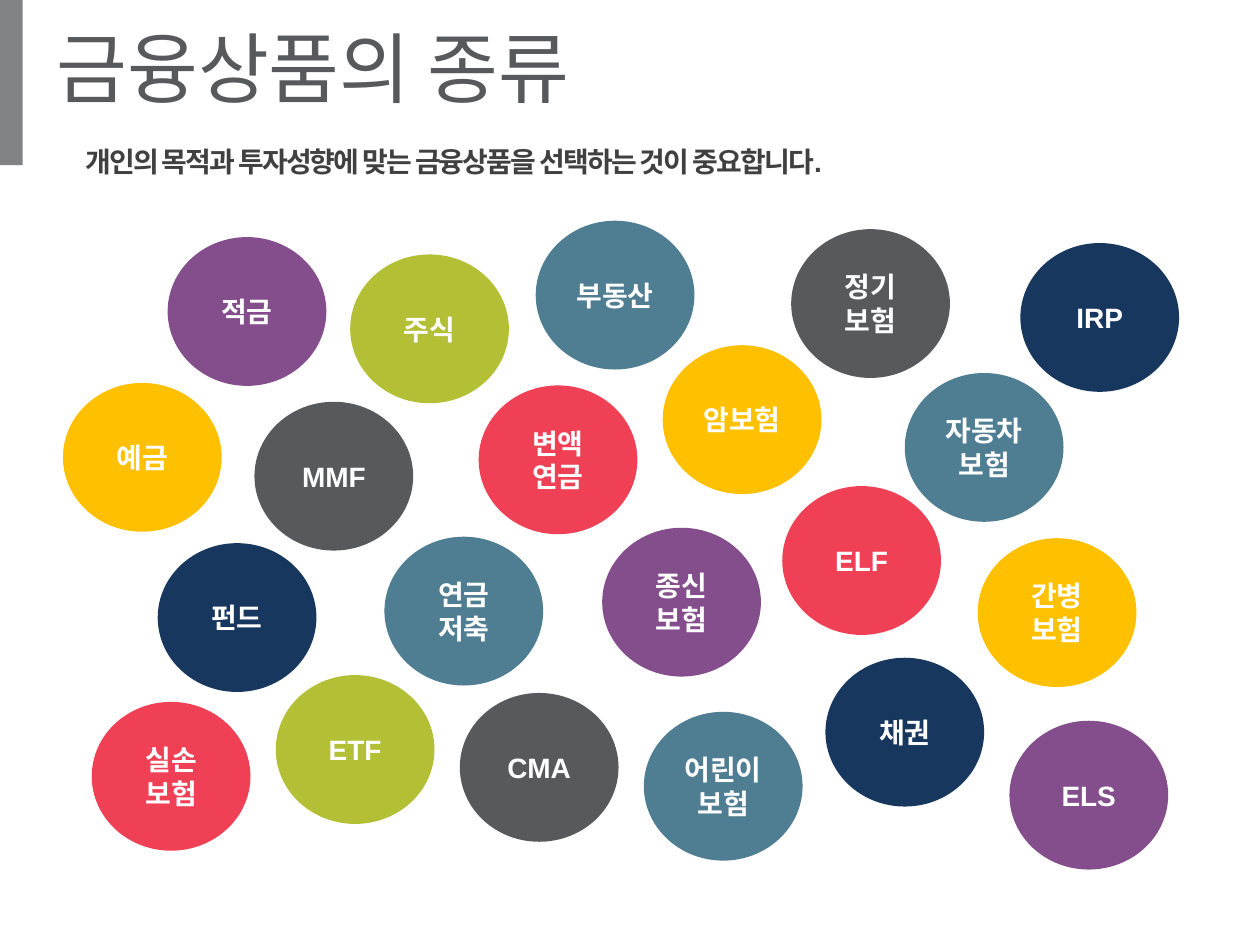
from pptx import Presentation
from pptx.dml.color import RGBColor
from pptx.enum.shapes import MSO_SHAPE as SHAPE
from pptx.enum.text import MSO_ANCHOR as ANCHOR, MSO_AUTO_SIZE as FIT, PP_ALIGN as ALIGN
from pptx.oxml.ns import qn
from pptx.util import Cm, Pt

COLORS = {
    "bar": "808285", "gray": "58595B", "text": "404040", "white": "FFFFFF",
    "purple": "834E8B", "yellow": "FFC000", "navy": "17375E",
    "green": "B3BF35", "red": "EF4056", "teal": "4F7D92",
}
BUBBLE_W, BUBBLE_H = 3.2, 3.0

# label, left (cm), top (cm), colour; from back to front
PRODUCTS = [
    ("적금", 3.38, 4.78, "purple"),
    ("예금", 1.27, 7.72, "yellow"),
    ("MMF", 5.13, 8.1, "gray"),
    ("펀드", 3.18, 10.95, "navy"),
    ("주식", 7.06, 5.13, "green"),
    ("변액\n연금", 9.65, 7.77, "red"),
    ("연금\n저축", 7.75, 10.82, "teal"),
    ("부동산", 10.8, 4.45, "teal"),
    ("종신\n보험", 12.14, 10.64, "purple"),
    ("IRP", 20.57, 4.9, "navy"),
    ("정기\n보험", 15.95, 4.62, "gray"),
    ("어린이보험", 12.98, 14.35, "teal"),
    ("채권", 16.64, 13.26, "navy"),
    ("실손\n보험", 1.85, 14.15, "red"),
    ("간병\n보험", 19.71, 10.85, "yellow"),
    ("ELS", 20.35, 14.53, "purple"),
    ("ELF", 15.77, 9.8, "red"),
    ("ETF", 5.56, 13.61, "green"),
    ("CMA", 9.27, 13.97, "gray"),
    ("암보험", 13.36, 6.96, "yellow"),
    ("자동차\n보험", 18.24, 7.52, "teal"),
]


class SlideBuilder:
    def __init__(self, slide):
        self.slide = slide

    def run(self, p, text, size, color, font="Arial", bold=True):
        r = p.add_run()
        r.text = text
        r.font.name = font
        r.font.size = Pt(size)
        r.font.bold = bold
        r.font.color.rgb = RGBColor.from_string(COLORS[color])
        return r

    def shape(self, kind, x, y, w, h, color):
        sp = self.slide.shapes.add_shape(kind, Cm(x), Cm(y), Cm(w), Cm(h))
        sp.shadow.inherit = False
        sp.fill.solid()
        sp.fill.fore_color.rgb = RGBColor.from_string(COLORS[color])
        sp.line.fill.background()
        return sp

    def bubble(self, label, x, y, color):
        tf = self.shape(SHAPE.OVAL, x, y, BUBBLE_W, BUBBLE_H, color).text_frame
        tf.word_wrap = True
        tf.vertical_anchor = ANCHOR.MIDDLE
        for i, line in enumerate(label.split("\n")):
            p = tf.add_paragraph() if i else tf.paragraphs[0]
            p.alignment = ALIGN.CENTER
            self.run(p, line, 16, "white")

    def text_frame(self, x, y, w, h, wrap):
        tf = self.slide.shapes.add_textbox(Cm(x), Cm(y), Cm(w), Cm(h)).text_frame
        tf.word_wrap = wrap
        return tf

    def title(self, text):
        font = "Noto Sans CJK KR"
        tf = self.text_frame(0.89, 0.28, 11.28, 2.13, wrap=False)
        tf.auto_size = FIT.SHAPE_TO_FIT_TEXT
        r = self.run(tf.paragraphs[0], text, 44, "gray", font, bold=False)
        ea = r.font._element.makeelement(qn("a:ea"), {"typeface": font})
        r.font._element.find(qn("a:latin")).addnext(ea)

    def subtitle(self, text):
        p = self.text_frame(1.47, 2.79, 22.63, 1.98, wrap=True).paragraphs[0]
        p.space_before = Pt(3)
        pPr = p._p.get_or_add_pPr()
        pPr.set("marL", str(Cm(0.97)))
        pPr.set("indent", str(-Cm(0.97)))
        r = self.run(p, text, 16, "text")
        r.font._element.set("spc", "-100")


def main():
    prs = Presentation()
    prs.slide_width, prs.slide_height = Cm(25.4), Cm(19.05)
    s = SlideBuilder(prs.slides.add_slide(prs.slide_layouts[6]))
    s.shape(SHAPE.RECTANGLE, 0, 0, 0.46, 3.33, "bar")
    s.title("금융상품의 종류")
    s.subtitle("개인의 목적과 투자성향에 맞는 금융상품을 선택하는 것이 중요합니다.")
    for product in PRODUCTS:
        s.bubble(*product)
    prs.save("out.pptx")


if __name__ == "__main__":
    main()
